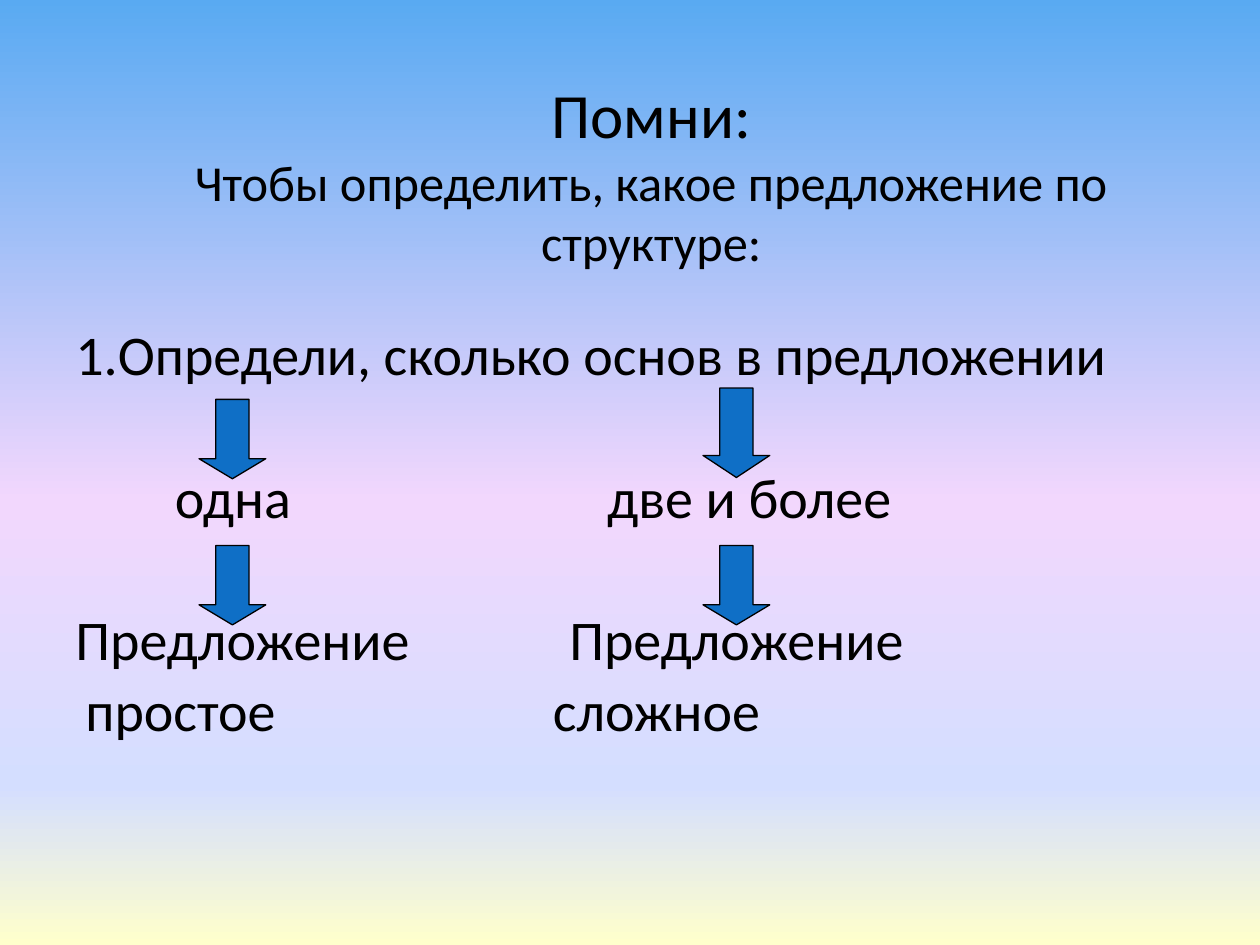
from dataclasses import dataclass

from lxml import etree
from pptx import Presentation
from pptx.dml.color import RGBColor
from pptx.enum.shapes import MSO_SHAPE as Preset
from pptx.enum.text import MSO_ANCHOR as Anchor, PP_ALIGN as Align
from pptx.oxml import parse_xml
from pptx.oxml.ns import nsdecls, qn
from pptx.util import Inches, Pt

BLACK = "000000"
ARROW_BLUE = "0F6FC6"
BACKGROUND_STOPS = {0: "59AAF2", 53: "F2D7FD", 83: "D4DEFF", 100: "FFFFCC"}
FONT = {"name": "Calibri"}
LINE_GAP = 5.8
BLANK_LINE = 41


@dataclass(frozen=True)
class Row:
    text: str
    tabs: tuple[float, ...] = ()
    space_before: float = LINE_GAP


@dataclass(frozen=True)
class Arrow:
    left: float
    top: float
    height: float = 0.63
    head: float = 0.3


ROWS = (
    Row("1.Определи, сколько основ в предложении", space_before=0),
    Row("\tодна\tдве и более", (0.79, 4.22), LINE_GAP + BLANK_LINE),
    Row("Предложение\tПредложение", (3.92,), LINE_GAP + BLANK_LINE),
    Row("\tпростое\tсложное", (0.08, 3.79)),
)

ONE_BASE, MANY_BASES = 1.58, 5.58
ARROWS = (
    Arrow(ONE_BASE, 3.17),
    Arrow(MANY_BASES, 3.08, 0.71, 0.33),
    Arrow(ONE_BASE, 4.33),
    Arrow(MANY_BASES, 4.33),
)


def color(value: str) -> RGBColor:
    return RGBColor.from_string(value)


def apply_format(target, values: dict) -> None:
    for name, value in values.items():
        setattr(target, name, value)


def set_background(slide) -> None:
    """Fill the slide from top to bottom with the gradient stops."""
    stops = "".join(
        f'<a:gs pos="{percent * 1000}"><a:srgbClr val="{value}"/></a:gs>'
        for percent, value in BACKGROUND_STOPS.items()
    )
    background = parse_xml(
        f'<p:bg {nsdecls("p", "a")}><p:bgPr><a:gradFill rotWithShape="1">'
        f'<a:gsLst>{stops}</a:gsLst><a:lin ang="5400000" scaled="0"/>'
        "</a:gradFill><a:effectLst/></p:bgPr></p:bg>"
    )
    slide.element.find(qn("p:cSld")).insert(0, background)


def add_text_frame(slide, left: float, top: float, width: float, height: float, anchor):
    box = slide.shapes.add_textbox(*map(Inches, (left, top, width, height)))
    apply_format(box.text_frame, {"word_wrap": True, "vertical_anchor": anchor})
    return box.text_frame


def add_run(paragraph, text: str, size: float) -> None:
    run = paragraph.add_run()
    run.text = text
    apply_format(run.font, FONT | {"size": Pt(size)})
    run.font.color.rgb = color(BLACK)


def set_tabs(paragraph, positions: tuple[float, ...]) -> None:
    tab_list = etree.SubElement(paragraph._p.get_or_add_pPr(), qn("a:tabLst"))
    for position in positions:
        etree.SubElement(tab_list, qn("a:tab"), pos=str(Inches(position)), algn="l")


def add_title(slide) -> None:
    paragraph = add_text_frame(slide, 0.67, 0.75, 9, 1.25, Anchor.MIDDLE).paragraphs[0]
    paragraph.alignment = Align.CENTER
    add_run(paragraph, "Помни:", 36)
    paragraph.add_line_break()
    add_run(paragraph, "Чтобы определить, какое предложение по структуре:", 28.8)


def add_body(slide) -> None:
    frame = add_text_frame(slide, 0.5, 2.55, 9, 4.95, Anchor.TOP)
    for index, row in enumerate(ROWS):
        paragraph = frame.add_paragraph() if index else frame.paragraphs[0]
        apply_format(paragraph, {
            "alignment": Align.LEFT,
            "line_spacing": 0.9,
            "space_before": Pt(row.space_before),
        })
        if row.tabs:
            set_tabs(paragraph, row.tabs)
        add_run(paragraph, row.text, 32)


def add_arrow(slide, arrow: Arrow) -> None:
    shape = slide.shapes.add_shape(
        Preset.DOWN_ARROW, *map(Inches, (arrow.left, arrow.top, 0.53, arrow.height))
    )
    shape.adjustments[1] = arrow.head
    shape.shadow.inherit = False
    shape.fill.solid()
    shape.fill.fore_color.rgb = color(ARROW_BLUE)
    shape.line.color.rgb = color(BLACK)
    shape.line.width = Pt(0.75)


def main() -> None:
    presentation = Presentation()
    apply_format(presentation, {"slide_width": Inches(10), "slide_height": Inches(7.5)})
    slide = presentation.slides.add_slide(presentation.slide_layouts[6])
    set_background(slide)
    add_title(slide)
    add_body(slide)
    for arrow in ARROWS:
        add_arrow(slide, arrow)
    presentation.save("out.pptx")


if __name__ == "__main__":
    main()
